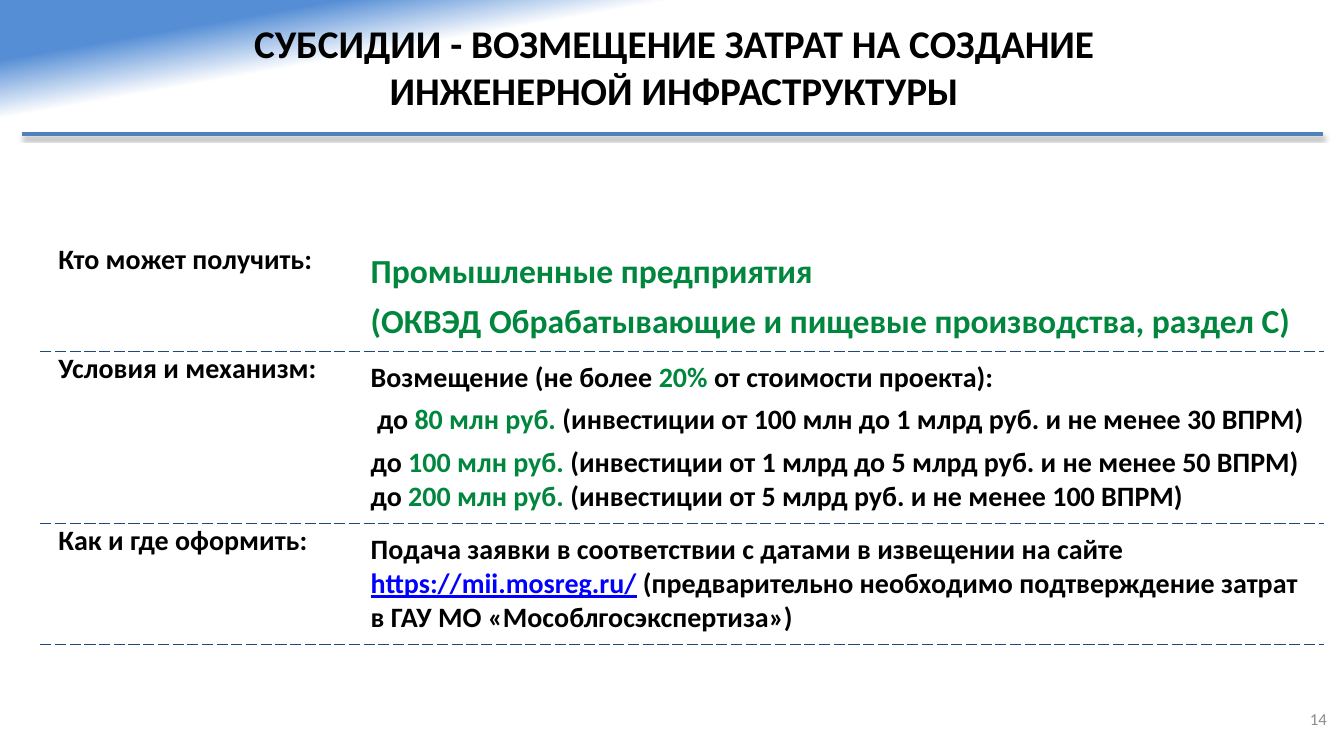
import pptx
import pptx.util
import pptx.dml.color
import pptx.enum.dml
import pptx.enum.shapes
import pptx.enum.text
import pptx.oxml

Inches = pptx.util.Inches
Pt = pptx.util.Pt
RGBColor = pptx.dml.color.RGBColor
ALIGN = pptx.enum.text.PP_ALIGN
ANCHOR = pptx.enum.text.MSO_ANCHOR

BLACK = RGBColor(0x00, 0x00, 0x00)
GREEN = RGBColor(0x00, 0x86, 0x3D)
LINK_BLUE = RGBColor(0x00, 0x00, 0xFF)
GRAY = RGBColor(0x8C, 0x8C, 0x8C)
WHITE = RGBColor(0xFF, 0xFF, 0xFF)
SKY = RGBColor(0x55, 0x8E, 0xD5)
RULE_BLUE = RGBColor(0x4F, 0x81, 0xBD)
BORDER_NAVY = RGBColor(0x1F, 0x49, 0x7D)

NAMESPACE = 'xmlns:a="http://schemas.openxmlformats.org/drawingml/2006/main"'
NO_GRID_STYLE = "{2D5ABB26-0587-4C30-8999-92F81FD0307C}"

COLUMN_WIDTHS = (3.1, 9.64)
ROW_HEIGHTS = (0.91, 1.64, 1.11)

# Each row: label, size of the answer, paragraphs made of (text, colour) runs
ROWS = [
    ("Кто может получить:", 24, [
        [("Промышленные предприятия", GREEN)],
        [("(ОКВЭД Обрабатывающие и пищевые производства, раздел С)", GREEN)],
    ]),
    ("Условия и механизм:", 20, [
        [("Возмещение (не более ", BLACK), ("20% ", GREEN),
         ("от стоимости проекта):", BLACK)],
        [(" до ", BLACK), ("80 млн руб. ", GREEN),
         ("(инвестиции от 100 млн до 1 млрд руб. и не менее 30 ВПРМ)", BLACK)],
        [("до ", BLACK), ("100 млн руб. ", GREEN),
         ("(инвестиции от 1 млрд до 5 млрд руб. и не менее 50 ВПРМ) до ", BLACK),
         ("200 млн руб. ", GREEN),
         ("(инвестиции от 5 млрд руб. и не менее 100 ВПРМ)", BLACK)],
    ]),
    ("Как и где оформить:", 20, [
        [("Подача заявки в соответствии с датами в извещении на сайте ", BLACK),
         ("https://mii.mosreg.ru/", LINK_BLUE),
         (" (предварительно необходимо подтверждение затрат"
          " в ГАУ МО «Мособлгосэкспертиза»)", BLACK)],
    ]),
]


def set_format(target, values):
    for attribute, value in values.items():
        setattr(target, attribute, value)


def add_run(paragraph, text, size, color, bold=True):
    run = paragraph.add_run()
    run.text = text
    set_format(run.font, {"name": "Calibri", "size": Pt(size), "bold": bold})
    run.font.color.rgb = color
    if color == LINK_BLUE:
        run.font.underline = True


def paint_background(slide):
    fill = slide.background.fill
    fill.gradient()
    fill.gradient_angle = 280
    for stop, (position, color) in zip(fill.gradient_stops, ((0.06, SKY), (0.12, WHITE))):
        stop.position = position
        stop.color.rgb = color


def set_title(slide, text):
    title = slide.shapes.title
    set_format(title, {"left": Inches(1.79), "top": Inches(0.14),
                       "width": Inches(9.8), "height": Inches(1.36)})
    frame = title.text_frame
    set_format(frame, {"margin_left": 0, "margin_right": 0,
                       "margin_top": Inches(0.05), "margin_bottom": Inches(0.05),
                       "vertical_anchor": ANCHOR.TOP, "word_wrap": True,
                       "auto_size": pptx.enum.text.MSO_AUTO_SIZE.NONE})
    frame.paragraphs[0].alignment = ALIGN.CENTER
    add_run(frame.paragraphs[0], text, 28, BLACK)


def add_title_rule(slide):
    rule = slide.shapes.add_connector(
        pptx.enum.shapes.MSO_CONNECTOR.STRAIGHT,
        Inches(0.22), Inches(1.33), Inches(13.13), Inches(1.33))
    rule.line.color.rgb = RULE_BLUE
    rule.line.width = Pt(3)
    rule._element.spPr.append(pptx.oxml.parse_xml(
        f'<a:effectLst {NAMESPACE}><a:outerShdw blurRad="{Pt(3.1)}" dist="{Pt(1.8)}" '
        'dir="5400000" rotWithShape="0"><a:srgbClr val="000000">'
        '<a:alpha val="35000"/></a:srgbClr></a:outerShdw></a:effectLst>'))


def format_cell(cell):
    """Clear the fill, set the margins and draw the dashed bottom border."""
    cell.fill.background()
    set_format(cell, {"margin_left": Inches(0.18), "margin_right": Inches(0.18),
                      "margin_top": Inches(0.09), "margin_bottom": Inches(0.09),
                      "vertical_anchor": ANCHOR.TOP})
    cell._tc.tcPr.insert(0, pptx.oxml.parse_xml(
        f'<a:lnB {NAMESPACE} w="{Pt(0.5)}"><a:solidFill><a:srgbClr val="{BORDER_NAVY}"/>'
        '</a:solidFill><a:prstDash val="dash"/></a:lnB>'))


def fill_label(cell, text):
    paragraph = cell.text_frame.paragraphs[0]
    set_format(paragraph, {"alignment": ALIGN.JUSTIFY, "line_spacing": Pt(18)})
    add_run(paragraph, text, 20, BLACK)


def fill_answer(cell, size, paragraphs):
    frame = cell.text_frame
    for index, runs in enumerate(paragraphs):
        paragraph = frame.add_paragraph() if index else frame.paragraphs[0]
        paragraph.space_before = Pt(6 if index else 0)
        for text, color in runs:
            add_run(paragraph, text, size, color)


def add_subsidy_table(slide):
    table = slide.shapes.add_table(
        len(ROWS), len(COLUMN_WIDTHS), Inches(0.4), Inches(2.41),
        Inches(sum(COLUMN_WIDTHS)), Inches(sum(ROW_HEIGHTS))).table
    set_format(table, {"first_row": False, "horz_banding": False})
    table._tbl.tblPr.find(pptx.oxml.ns.qn("a:tableStyleId")).text = NO_GRID_STYLE
    for column, width in zip(table.columns, COLUMN_WIDTHS):
        column.width = Inches(width)
    for row, height, (label, size, answer) in zip(table.rows, ROW_HEIGHTS, ROWS):
        row.height = Inches(height)
        for cell in row.cells:
            format_cell(cell)
        fill_label(row.cells[0], label)
        fill_answer(row.cells[1], size, answer)


def add_page_number(slide, number):
    box = slide.shapes.add_textbox(Inches(12.71), Inches(6.93), Inches(0.59), Inches(0.4))
    frame = box.text_frame
    set_format(frame, {"margin_left": Inches(0.13), "margin_right": Inches(0.13),
                       "margin_top": Inches(0.07), "margin_bottom": Inches(0.07),
                       "vertical_anchor": ANCHOR.MIDDLE, "word_wrap": True})
    frame.paragraphs[0].alignment = ALIGN.RIGHT
    add_run(frame.paragraphs[0], number, 12, GRAY, bold=False)


def main():
    presentation = pptx.Presentation()
    set_format(presentation, {"slide_width": Inches(13.34), "slide_height": Inches(7.48)})
    slide = presentation.slides.add_slide(presentation.slide_layouts[5])
    paint_background(slide)
    set_title(slide, "СУБСИДИИ - ВОЗМЕЩЕНИЕ ЗАТРАТ НА СОЗДАНИЕ ИНЖЕНЕРНОЙ ИНФРАСТРУКТУРЫ")
    add_subsidy_table(slide)
    add_title_rule(slide)
    add_page_number(slide, "14")
    presentation.save("out.pptx")


if __name__ == "__main__":
    main()
